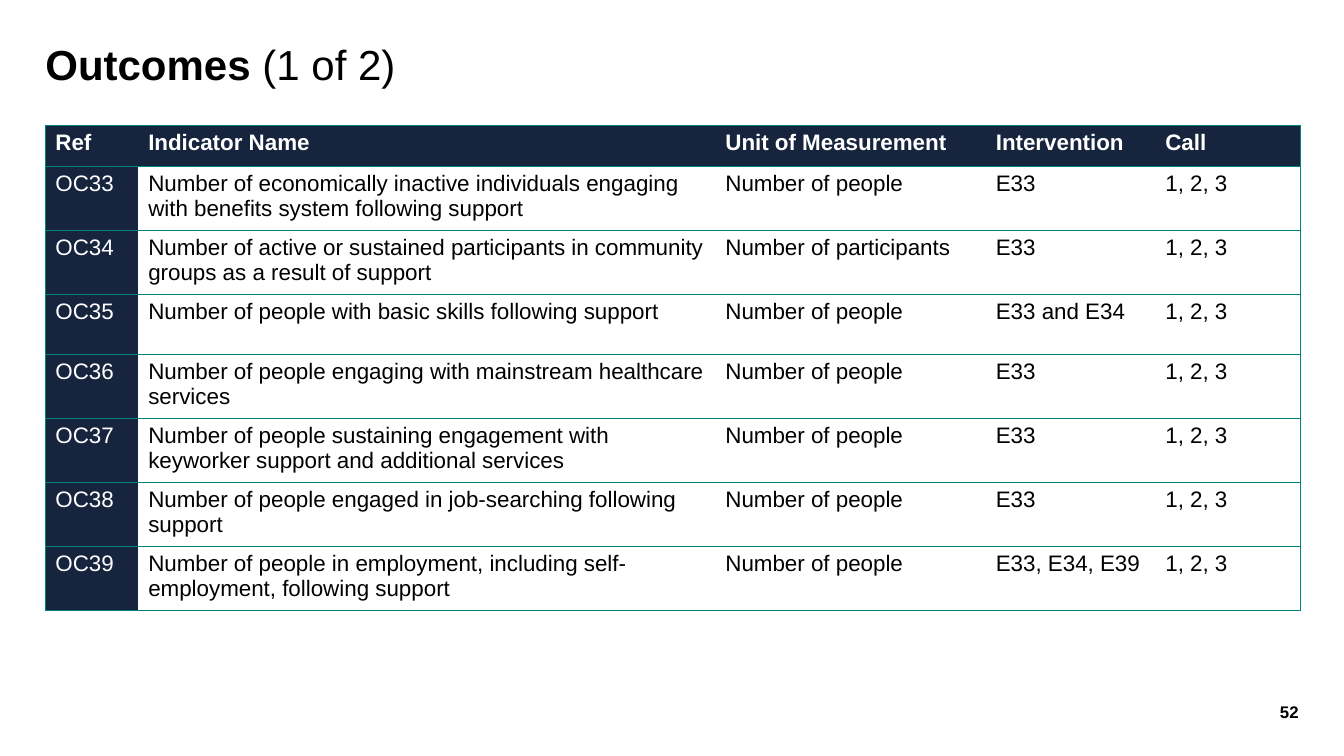
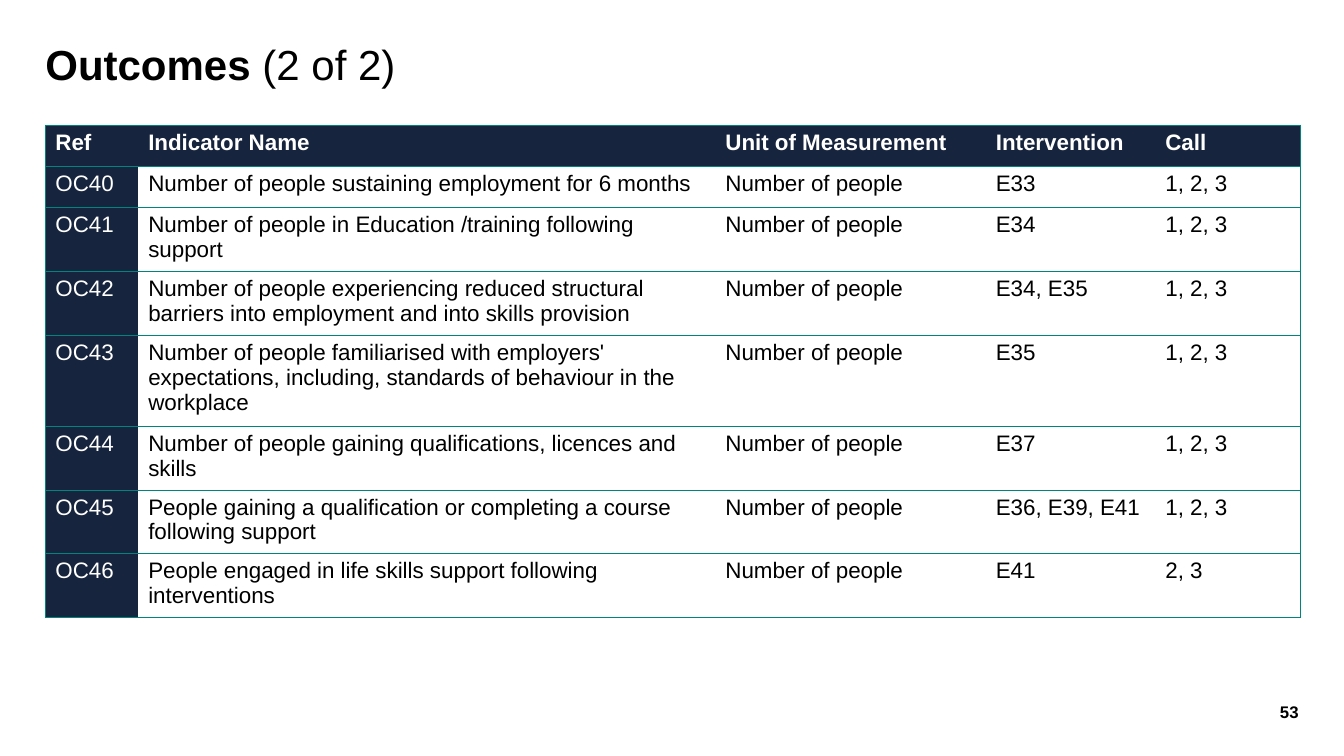
import pptx
import pptx.dml.color
import pptx.enum.text
import pptx.oxml
import pptx.oxml.ns
import pptx.util
from dataclasses import dataclass


@dataclass(frozen=True)
class Theme:
    font: str = "Arial"
    navy: str = "17243D"
    teal: str = "00847E"
    white: str = "FFFFFF"
    black: str = "000000"
    title_size: float = 30
    table_size: float = 16
    number_size: float = 12
    rule_width: float = 0.5


THEME = Theme()
INCH = pptx.util.Inches
NO_TABLE_STYLE = "{2D5ABB26-0587-4C30-8999-92F81FD0307C}"

MARGIN = INCH(0.45)
CONTENT_WIDTH = INCH(12.45)
TITLE_TOP, TITLE_HEIGHT = INCH(0.44), INCH(0.63)
TABLE_TOP = INCH(1.24)
NUMBER_BOX = [INCH(length) for length in (12.17, 6.86, 0.71, 0.4)]
COLUMN_WEIGHTS = (0.92, 5.72, 2.68, 1.68, 1.44)
ONE_LINE, TWO_LINES, THREE_LINES = 0.41, 0.6, 0.85

HEADER = (ONE_LINE, "Ref", "Indicator Name", "Unit of Measurement", "Intervention", "Call")
PEOPLE = "Number of people"
ALL_CALLS = "1, 2, 3"

PAGES = [
    (52, "(1 of 2)", [
        (0.62, "OC33", "Number of economically inactive individuals engaging with benefits system following support",
         PEOPLE, "E33", ALL_CALLS),
        (TWO_LINES, "OC34", "Number of active or sustained participants in community groups as a result of support",
         "Number of participants", "E33", ALL_CALLS),
        (TWO_LINES, "OC35", "Number of people with basic skills following support",
         PEOPLE, "E33 and E34", ALL_CALLS),
        (TWO_LINES, "OC36", "Number of people engaging with mainstream healthcare services",
         PEOPLE, "E33", ALL_CALLS),
        (TWO_LINES, "OC37", "Number of people sustaining engagement with keyworker support and additional services",
         PEOPLE, "E33", ALL_CALLS),
        (TWO_LINES, "OC38", "Number of people engaged in job-searching following support",
         PEOPLE, "E33", ALL_CALLS),
        (TWO_LINES, "OC39", "Number of people in employment, including self-employment, following support",
         PEOPLE, "E33, E34, E39", ALL_CALLS),
    ]),
    (53, "(2 of 2)", [
        (ONE_LINE, "OC40", "Number of people sustaining employment for 6 months",
         PEOPLE, "E33", ALL_CALLS),
        (TWO_LINES, "OC41", "Number of people in Education /training following support",
         PEOPLE, "E34", ALL_CALLS),
        (TWO_LINES, "OC42", "Number of people experiencing reduced structural barriers into employment "
         "and into skills provision", PEOPLE, "E34, E35", ALL_CALLS),
        (THREE_LINES, "OC43", "Number of people familiarised with employers' expectations, including, "
         "standards of behaviour in the workplace", PEOPLE, "E35", ALL_CALLS),
        (TWO_LINES, "OC44", "Number of people gaining qualifications, licences and skills",
         PEOPLE, "E37", ALL_CALLS),
        (TWO_LINES, "OC45", "People gaining a qualification or completing a course following support",
         PEOPLE, "E36, E39, E41", ALL_CALLS),
        (TWO_LINES, "OC46", "People engaged in life skills support following interventions",
         PEOPLE, "E41", "2, 3"),
    ]),
]


def format_run(run, size, color, bold):
    run.font.name = THEME.font
    run.font.size = pptx.util.Pt(size)
    run.font.bold = bold
    run.font.color.rgb = pptx.dml.color.RGBColor.from_string(color)


def rule_cell(cell, sides):
    """Draw a teal rule on the given sides (L, R, T, B) and clear the others."""
    properties = cell._tc.get_or_add_tcPr()
    for position, side in enumerate("LRTB"):
        paint = f'<a:solidFill><a:srgbClr val="{THEME.teal}"/></a:solidFill>' if side in sides else "<a:noFill/>"
        properties.insert(position, pptx.oxml.parse_xml(
            f'<a:ln{side} {pptx.oxml.ns.nsdecls("a")} w="{pptx.util.Pt(THEME.rule_width)}">{paint}</a:ln{side}>'))


deck = pptx.Presentation()
deck.slide_width, deck.slide_height = INCH(13.33), INCH(7.5)

title_only = deck.slide_layouts[5]
layout_title = title_only.placeholders[0]
layout_title.left, layout_title.top = MARGIN, TITLE_TOP
layout_title.width, layout_title.height = CONTENT_WIDTH, TITLE_HEIGHT

for page_number, part, indicators in PAGES:
    slide = deck.slides.add_slide(title_only)

    number_frame = slide.shapes.add_textbox(*NUMBER_BOX).text_frame
    number_frame.text = str(page_number)
    number_frame.word_wrap = True
    number_frame.vertical_anchor = pptx.enum.text.MSO_ANCHOR.MIDDLE
    number_frame.paragraphs[0].alignment = pptx.enum.text.PP_ALIGN.RIGHT
    format_run(number_frame.paragraphs[0].runs[0], THEME.number_size, THEME.black, True)

    title_frame = slide.shapes.title.text_frame
    title_frame.vertical_anchor = pptx.enum.text.MSO_ANCHOR.TOP
    title_frame.auto_size = pptx.enum.text.MSO_AUTO_SIZE.NONE
    heading = title_frame.paragraphs[0]
    heading.alignment = pptx.enum.text.PP_ALIGN.LEFT
    heading.line_spacing = 0.9
    for words, bold in (("Outcomes ", True), (part, False)):
        run = heading.add_run()
        run.text = words
        format_run(run, THEME.title_size, THEME.black, bold)

    for frame in (number_frame, title_frame):
        frame.margin_left = frame.margin_right = frame.margin_top = frame.margin_bottom = 0

    rows = [HEADER] + indicators
    table_height = INCH(sum(row[0] for row in rows))
    outcomes = slide.shapes.add_table(
        len(rows), len(COLUMN_WEIGHTS), MARGIN, TABLE_TOP, CONTENT_WIDTH, table_height).table
    outcomes.horz_banding = False
    outcomes._tbl.tblPr.find(pptx.oxml.ns.qn("a:tableStyleId")).text = NO_TABLE_STYLE
    for column, weight in zip(outcomes.columns, COLUMN_WEIGHTS):
        column.width = round(CONTENT_WIDTH * weight / sum(COLUMN_WEIGHTS))

    for row_index, (height, *texts) in enumerate(rows):
        outcomes.rows[row_index].height = INCH(height)
        for column_index, words in enumerate(texts):
            cell = outcomes.cell(row_index, column_index)
            is_header = row_index == 0
            is_dark = is_header or column_index == 0
            cell.text = words
            format_run(cell.text_frame.paragraphs[0].runs[0], THEME.table_size,
                       THEME.white if is_dark else THEME.black, is_header)
            if is_dark:
                cell.fill.solid()
                cell.fill.fore_color.rgb = pptx.dml.color.RGBColor.from_string(THEME.navy)
            else:
                cell.fill.background()
            outer = {0: "L", len(texts) - 1: "R"}.get(column_index, "")
            rule_cell(cell, "TB" + outer)

deck.save("out.pptx")
